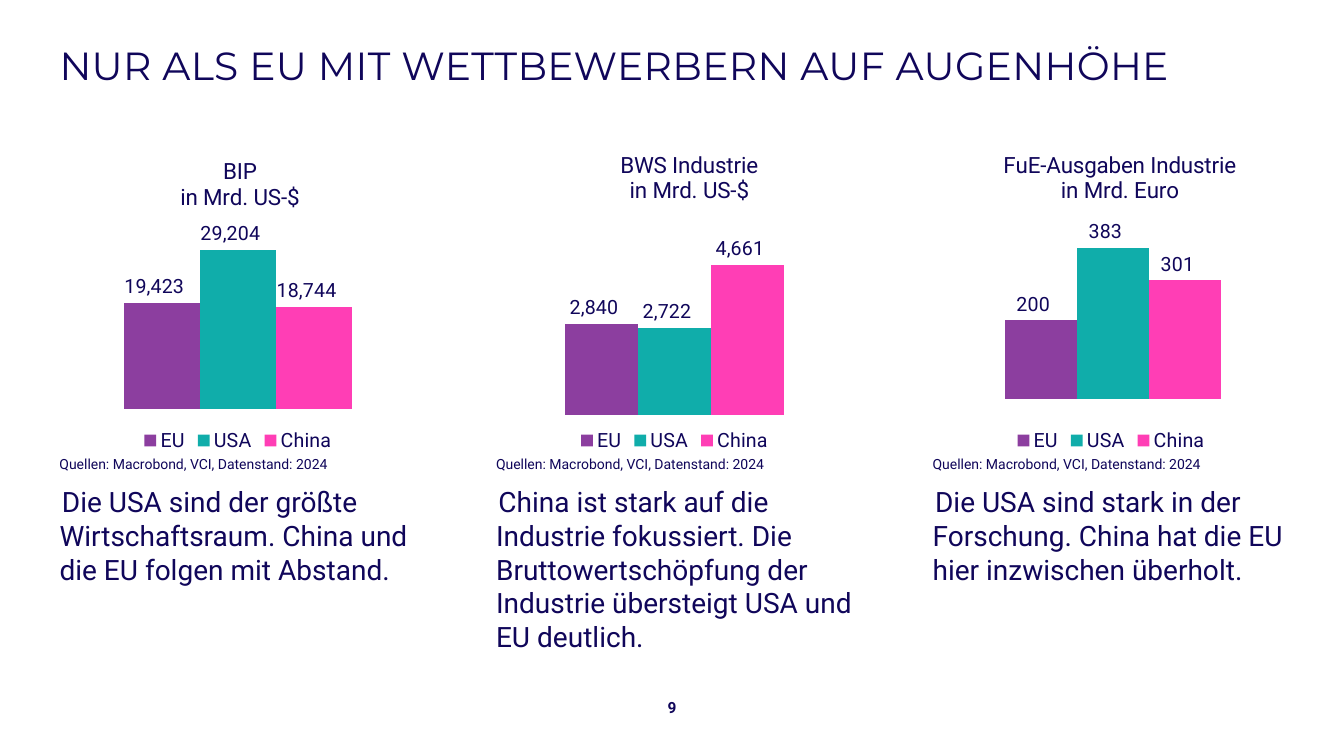
from lxml.etree import SubElement
from pptx import Presentation
from pptx.chart.data import CategoryChartData
from pptx.dml.color import RGBColor
from pptx.enum.chart import XL_CHART_TYPE, XL_LABEL_POSITION, XL_LEGEND_POSITION
from pptx.enum.text import MSO_ANCHOR, MSO_AUTO_SIZE, PP_ALIGN
from pptx.oxml import parse_xml
from pptx.oxml.ns import nsdecls, qn
from pptx.util import Inches, Pt

COLORS = {"text": "10065A", "EU": "8C3E9F", "USA": "10ADAA", "China": "FF3EB5", "bullet": "FFFFFF"}
NUMBER_FORMAT = r'_-* #,##0\ _€_-;\-* #,##0\ _€_-;_-* "-"?'
SOURCE = "Quellen: Macrobond, VCI, Datenstand: 2024"
REGIONS = ["EU", "USA", "China"]
COLUMN_LEFT, COLUMN_STEP, COLUMN_WIDTH = 0.59, 4.33, 3.54

COLUMNS = [
    {
        "heading": ["BIP", "in Mrd. US-$"], "heading_at": (0.33, 0.05),
        "values": [19423, 29204, 18744], "maximum": 35000, "plot": (0.02, 0.25, 0.96, 0.6),
        "statement": "Die USA sind der größte Wirtschaftsraum. China und die EU folgen mit Abstand.",
    },
    {
        "heading": ["BWS Industrie", "in Mrd. US-$"], "heading_at": (0.34, 0.03),
        "values": [2840, 2722, 4661], "maximum": 7000, "plot": (0.04, 0.16, 0.92, 0.71),
        "statement": "China ist stark auf die Industrie fokussiert. Die Bruttowertschöpfung "
                     "der Industrie übersteigt USA und EU deutlich.",
    },
    {
        "heading": ["FuE-Ausgaben Industrie", "in Mrd. Euro"], "heading_at": (0.19, 0.03),
        "values": [200, 383, 301], "maximum": 450, "plot": (0.05, 0.26, 0.91, 0.56),
        "statement": "Die USA sind stark in der Forschung. China hat die EU hier inzwischen überholt.",
    },
]


def style_font(font, size, name="Roboto", bold=False):
    """Apply the deck's text colour with the given size and face."""
    font.size, font.name, font.bold = Pt(size), name, bold
    font.color.rgb = RGBColor.from_string(COLORS["text"])


def place(shape, left, top, width, height):
    """Move a shape to a box given in inches."""
    shape.left, shape.top = Inches(left), Inches(top)
    shape.width, shape.height = Inches(width), Inches(height)


def fill_frame(shape, text, size, name="Roboto", bold=False, align=PP_ALIGN.LEFT,
               anchor=MSO_ANCHOR.TOP, inset=0.0, bulleted=False):
    """Write one styled paragraph into a shape."""
    frame = shape.text_frame
    frame.word_wrap, frame.auto_size = True, MSO_AUTO_SIZE.NONE
    frame.vertical_anchor = anchor
    frame.margin_left = frame.margin_right = 0
    frame.margin_top = frame.margin_bottom = Inches(inset)
    frame.text = text
    paragraph = frame.paragraphs[0]
    paragraph.alignment, paragraph.space_before = align, Pt(0)
    if bulleted:
        add_bullet(paragraph)
    style_font(paragraph.font, size, name, bold)
    return paragraph


def add_bullet(paragraph):
    """Give a paragraph a small white bullet without indent."""
    properties = paragraph._p.get_or_add_pPr()
    properties.set("marL", "0")
    properties.set("indent", "0")
    color = SubElement(properties, qn("a:buClr"))
    SubElement(color, qn("a:srgbClr"), val=COLORS["bullet"])
    SubElement(properties, qn("a:buSzPct"), val="25000")
    SubElement(properties, qn("a:buChar"), char="•")


def manual_layout(inner=False, **fractions):
    """Build a chart layout element from fractions of the chart area."""
    target = '<c:layoutTarget val="inner"/>' if inner else ""
    modes = '<c:xMode val="edge"/><c:yMode val="edge"/>'
    sizes = "".join(f'<c:{key} val="{value}"/>' for key, value in fractions.items())
    return parse_xml(f'<c:layout {nsdecls("c")}><c:manualLayout>{target}{modes}{sizes}'
                     '</c:manualLayout></c:layout>')


def set_layout(parent, layout, position):
    """Replace the layout of a chart part."""
    for previous in parent.findall(qn("c:layout")):
        parent.remove(previous)
    parent.insert(position, layout)


def add_heading(chart, lines, heading_at):
    """Write the two-line chart title at its place."""
    chart.has_title = True
    frame = chart.chart_title.text_frame
    frame.text = "\n".join(lines)
    for paragraph in frame.paragraphs:
        style_font(paragraph.font, 16)
    left, top = heading_at
    set_layout(chart.chart_title._element, manual_layout(x=left, y=top), 1)


def add_bars(slide, column, left, top, width, height):
    """Draw the clustered columns of one topic."""
    data = CategoryChartData(number_format=NUMBER_FORMAT)
    data.categories = ["1"]
    for region, value in zip(REGIONS, column["values"]):
        data.add_series(region, [value])
    chart = slide.shapes.add_chart(XL_CHART_TYPE.COLUMN_CLUSTERED, Inches(left), Inches(top),
                                   Inches(width), Inches(height), data).chart
    style_font(chart.font, 14)
    add_heading(chart, column["heading"], column["heading_at"])
    chart.category_axis.visible = chart.value_axis.visible = False
    chart.value_axis.has_major_gridlines = False
    chart.value_axis.minimum_scale, chart.value_axis.maximum_scale = 0, column["maximum"]
    chart.has_legend = True
    chart.legend.position, chart.legend.include_in_layout = XL_LEGEND_POSITION.BOTTOM, False
    style_font(chart.legend.font, 14)

    plot = chart.plots[0]
    plot.gap_width, plot.overlap, plot.vary_by_categories = 150, 0, False
    for series in plot.series:
        series.format.fill.solid()
        series.format.fill.fore_color.rgb = RGBColor.from_string(COLORS[series.name])
        labels = series.data_labels
        labels.show_value, labels.position = True, XL_LABEL_POSITION.OUTSIDE_END
        labels.number_format, labels.number_format_is_linked = NUMBER_FORMAT, False
        style_font(labels.font, 14)
    area = chart._chartSpace.chart.plotArea
    set_layout(area, manual_layout(inner=True, **dict(zip("xywh", column["plot"]))), 0)


def add_column(slide, column, statement, left, width):
    """Build one topic: chart, source line and statement."""
    add_bars(slide, column, left, 1.38, width, 3.15)
    source = slide.shapes.add_textbox(Inches(left), Inches(4.52), Inches(width), Inches(0.24))
    fill_frame(source, SOURCE, 10)
    place(statement, left, 4.77, width, 1.72)
    fill_frame(statement, column["statement"], 20, inset=0.04, bulleted=True)


def add_title(slide):
    """Write the slide title."""
    place(slide.shapes.title, 0.59, 0.15, 12.2, 0.98)
    paragraph = fill_frame(slide.shapes.title, "NUR ALS EU MIT WETTBEWERBERN AUF AUGENHÖHE", 28,
                           name="Montserrat", anchor=MSO_ANCHOR.MIDDLE, inset=0.04)
    paragraph.runs[0]._r.get_or_add_rPr().set("spc", "30")


def add_page_number(slide):
    """Write the page number at the foot."""
    number = slide.shapes.add_textbox(Inches(6.37), Inches(6.88), Inches(0.59), Inches(0.28))
    fill_frame(number, "9", 11, bold=True, align=PP_ALIGN.CENTER, anchor=MSO_ANCHOR.MIDDLE)


def main():
    """Build and save the slide."""
    presentation = Presentation()
    presentation.slide_width, presentation.slide_height = Inches(13.33), Inches(7.5)
    slide = presentation.slides.add_slide(presentation.slide_layouts.get_by_name("Comparison"))
    add_title(slide)
    *statements, spare = list(slide.placeholders)[1:]
    spare._element.getparent().remove(spare._element)
    for index, (column, statement) in enumerate(zip(COLUMNS, statements)):
        add_column(slide, column, statement, COLUMN_LEFT + index * COLUMN_STEP, COLUMN_WIDTH)
    add_page_number(slide)
    presentation.save("out.pptx")


if __name__ == "__main__":
    main()
